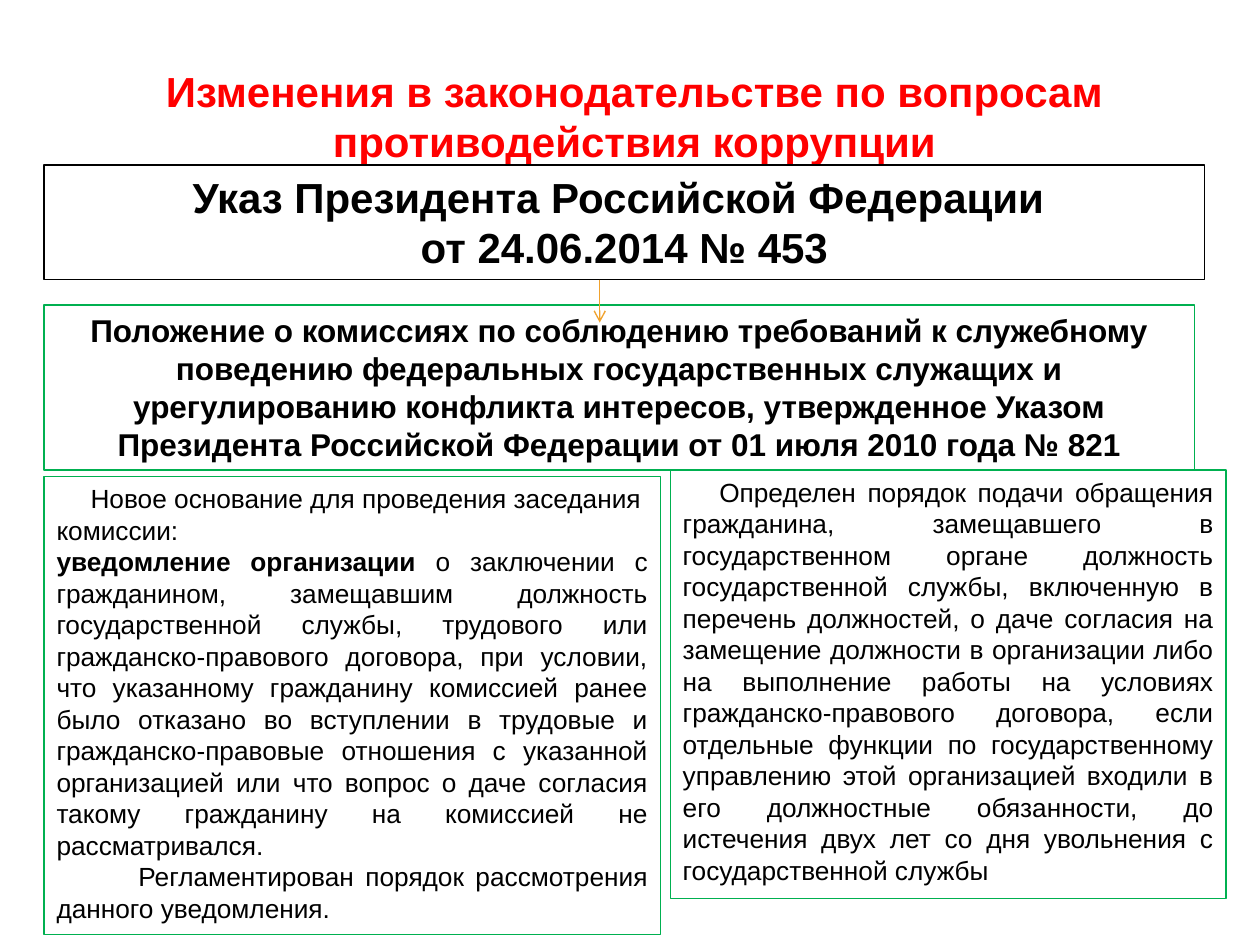
from lxml.etree import SubElement
from pptx import Presentation
from pptx.dml.color import RGBColor
from pptx.enum.shapes import MSO_CONNECTOR, MSO_SHAPE
from pptx.enum.text import MSO_ANCHOR, MSO_AUTO_SIZE, PP_ALIGN as AL
from pptx.oxml.ns import qn
from pptx.util import Inches as In, Pt

LEFT = 0.35
GREEN = "00B050"


def rgb(value):
    return RGBColor.from_string(value)


def write(tf, paragraphs, size, color="000000", anchor=MSO_ANCHOR.TOP):
    """Fill a frame with (alignment, first-line indent, [(text, bold), ...]) paragraphs."""
    frame_format = {"word_wrap": True, "auto_size": MSO_AUTO_SIZE.NONE,
                    "vertical_anchor": anchor}
    for name, value in frame_format.items():
        setattr(tf, name, value)
    for i, (align, indent, runs) in enumerate(paragraphs):
        p = tf.paragraphs[0] if i == 0 else tf.add_paragraph()
        p.alignment = align
        if indent:
            p._p.get_or_add_pPr().set("indent", str(In(indent)))
        for text, bold in runs:
            r = p.add_run()
            r.text = text
            for name, value in {"name": "Arial", "size": Pt(size), "bold": bold}.items():
                setattr(r.font, name, value)
            r.font.color.rgb = rgb(color)


prs = Presentation()
prs.slide_width, prs.slide_height = In(10), In(7.5)
s = prs.slides.add_slide(prs.slide_layouts[5])

title = s.shapes.title
title.left, title.top, title.width, title.height = In(LEFT), In(0.46), In(9.37), In(0.91)
write(title.text_frame,
      [(AL.CENTER, 0, [("Изменения в законодательстве по вопросам "
                        "противодействия коррупции", True)])],
      24, "FF0000", MSO_ANCHOR.BOTTOM)

decree = [
    (AL.CENTER, 0, [("Указ Президента Российской Федерации ", True)]),
    (AL.CENTER, 0, [("от 24.06.2014 № 453", True)]),
]
notice = [
    (AL.LEFT, 0.27, [("Новое основание для проведения заседания комиссии:", False)]),
    (AL.JUSTIFY, 0, [
        ("уведомление организации ", True),
        ("о заключении с гражданином, замещавшим должность государственной службы, "
         "трудового или гражданско-правового договора, при условии, что указанному "
         "гражданину комиссией ранее было отказано во вступлении в трудовые и "
         "гражданско-правовые отношения с указанной организацией или что вопрос о даче "
         "согласия такому гражданину на комиссией не рассматривался.", False)]),
    (AL.JUSTIFY, 0.65, [("Регламентирован порядок рассмотрения данного уведомления.", False)]),
]
appeal = [
    (AL.JUSTIFY, 0.29, [
        ("Определен порядок подачи обращения гражданина, замещавшего в государственном "
         "органе должность государственной службы, включенную в перечень должностей, о "
         "даче согласия на замещение должности в организации либо на выполнение работы на "
         "условиях гражданско-правового договора, если отдельные функции по "
         "государственному управлению этой организацией входили в его должностные "
         "обязанности, до истечения двух лет со дня увольнения с государственной службы",
         False)]),
]
regulation = [
    (AL.CENTER, 0, [
        ("Положение о комиссиях по соблюдению требований к служебному поведению "
         "федеральных государственных служащих и урегулированию конфликта интересов, "
         "утвержденное Указом Президента Российской Федерации от 01 июля 2010 года № 821",
         True)]),
]

boxes = [
    ((LEFT, 1.31, 9.21, 0.91), "000000", 24, decree),
    ((LEFT, 3.78, 4.89, 3.64), GREEN, 15, notice),
    ((5.32, 3.73, 4.41, 3.4), GREEN, 15, appeal),
    ((LEFT, 2.42, 9.13, 1.31), GREEN, 18, regulation),
]
for place, color, size, paragraphs in boxes:
    sp = s.shapes.add_shape(MSO_SHAPE.RECTANGLE, *map(In, place))
    sp.shadow.inherit = False
    sp.fill.background()
    sp.line.color.rgb = rgb(color)
    sp.line.width = Pt(0.75)
    write(sp.text_frame, paragraphs, size)

arrow = s.shapes.add_connector(MSO_CONNECTOR.STRAIGHT, In(4.76), In(2.22), In(4.76), In(2.56))
arrow.line.color.rgb = rgb("F0A22E")
arrow.line.width = Pt(0.79)
SubElement(arrow.line._get_or_add_ln(), qn("a:tailEnd"), type="arrow")
SubElement(arrow._element.spPr, qn("a:effectLst"))

prs.save("out.pptx")
